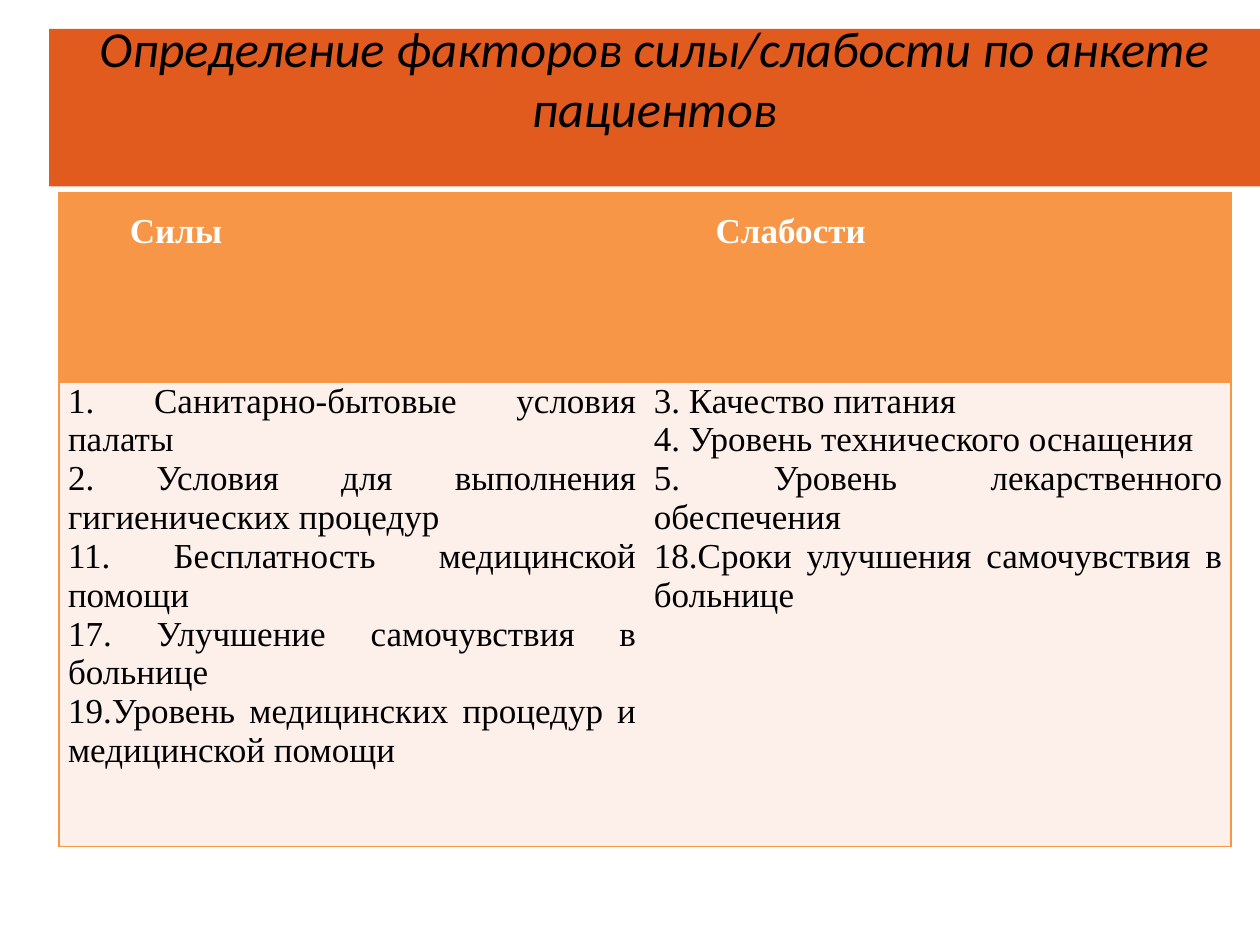
from dataclasses import dataclass

from lxml import etree
from pptx import Presentation
from pptx.dml.color import RGBColor
from pptx.enum.text import MSO_ANCHOR, MSO_AUTO_SIZE, PP_ALIGN
from pptx.oxml.ns import qn
from pptx.util import Inches, Pt

CENTER, JUSTIFY = PP_ALIGN.CENTER, PP_ALIGN.JUSTIFY
MIDDLE = MSO_ANCHOR.MIDDLE
NO_AUTOFIT = MSO_AUTO_SIZE.NONE

BLACK = RGBColor(0x00, 0x00, 0x00)
WHITE = RGBColor(0xFF, 0xFF, 0xFF)
BANNER = RGBColor(0xE1, 0x5B, 0x1F)
ORANGE = RGBColor(0xF7, 0x96, 0x46)
PALE = RGBColor(0xFD, 0xEF, 0xE9)

TITLE = "Определение факторов силы/слабости по анкете пациентов"
TITLE_SIZE = Pt(28.8)
TABLE_FONT = "Times New Roman"
TABLE_SIZE = Pt(20)


@dataclass
class FactorColumn:
    heading: str
    factors: list[str]
    outer_side: str


COLUMNS = [
    FactorColumn("Силы", [
        "1. Санитарно-бытовые условия палаты",
        "2. Условия для выполнения гигиенических процедур",
        "11. Бесплатность медицинской помощи",
        "17. Улучшение самочувствия в больнице",
        "19.Уровень медицинских процедур и медицинской помощи",
    ], "L"),
    FactorColumn("Слабости", [
        "3. Качество питания",
        "4. Уровень технического оснащения",
        "5. Уровень лекарственного обеспечения",
        "18.Сроки улучшения самочувствия в больнице",
    ], "R"),
]


def add_title(slide) -> None:
    title = slide.shapes.title
    title.left, title.top = Inches(0.39), Inches(0.23)
    title.width, title.height = Inches(9.61), Inches(1.25)
    title.fill.solid()
    title.fill.fore_color.rgb = BANNER
    frame = title.text_frame
    frame.word_wrap = True
    frame.auto_size = NO_AUTOFIT
    frame.vertical_anchor = MIDDLE
    paragraph = frame.paragraphs[0]
    paragraph.alignment = CENTER
    run = paragraph.add_run()
    run.text = TITLE
    run.font.size = TITLE_SIZE
    run.font.name = "Calibri"
    run.font.italic = True
    run.font.color.rgb = BLACK
    paragraph.add_line_break()
    # The empty last line keeps the height of the title text
    size = str(TITLE_SIZE.centipoints)
    line_break = paragraph._p.find(qn("a:br"))
    etree.SubElement(line_break, qn("a:rPr"), sz=size)
    etree.SubElement(paragraph._p, qn("a:endParaRPr"), sz=size)


def set_borders(cell, outer_side: str) -> None:
    """Draw top, bottom and the outer side; hide the inner side."""
    properties = cell._tc.get_or_add_tcPr()
    for side in "LRTB":
        line = etree.SubElement(properties, qn(f"a:ln{side}"), w=str(Pt(1)))
        if side in "TB" + outer_side:
            fill = etree.SubElement(line, qn("a:solidFill"))
            etree.SubElement(fill, qn("a:srgbClr"), val=str(ORANGE))
        else:
            etree.SubElement(line, qn("a:noFill"))


def format_cell(cell, outer_side: str, background: RGBColor) -> None:
    cell.margin_left = cell.margin_right = Inches(0.07)
    cell.margin_top = cell.margin_bottom = 0
    set_borders(cell, outer_side)
    cell.fill.solid()
    cell.fill.fore_color.rgb = background


def write_line(paragraph, text: str, color: RGBColor, bold: bool) -> None:
    paragraph.alignment = JUSTIFY
    run = paragraph.add_run()
    run.text = text
    run.font.name = TABLE_FONT
    run.font.size = TABLE_SIZE
    run.font.bold = bold
    run.font.color.rgb = color


def indent_heading(paragraph) -> None:
    paragraph.line_spacing = 1.5
    properties = paragraph._p.get_or_add_pPr()
    properties.set("marL", "0")
    properties.set("indent", str(Inches(0.49)))
    tabs = etree.SubElement(properties, qn("a:tabLst"))
    etree.SubElement(tabs, qn("a:tab"), pos=str(Inches(0.12)), algn="l")


def add_factor_table(slide) -> None:
    table = slide.shapes.add_table(
        2, len(COLUMNS), Inches(0.47), Inches(1.53), Inches(9.3), Inches(5.19)
    ).table
    table.first_row = table.horz_banding = False
    table.rows[0].height = Inches(1.5)
    table.rows[1].height = Inches(3.69)
    for index, column in enumerate(COLUMNS):
        heading, body = table.cell(0, index), table.cell(1, index)
        format_cell(heading, column.outer_side, ORANGE)
        format_cell(body, column.outer_side, PALE)
        heading_line = heading.text_frame.paragraphs[0]
        indent_heading(heading_line)
        write_line(heading_line, column.heading, WHITE, True)
        frame = body.text_frame
        for number, factor in enumerate(column.factors):
            paragraph = frame.add_paragraph() if number else frame.paragraphs[0]
            write_line(paragraph, factor, BLACK, False)


def main() -> None:
    presentation = Presentation()
    presentation.slide_width = Inches(10)
    presentation.slide_height = Inches(7.5)
    slide = presentation.slides.add_slide(presentation.slide_layouts[5])
    add_title(slide)
    add_factor_table(slide)
    presentation.save("out.pptx")


if __name__ == "__main__":
    main()
